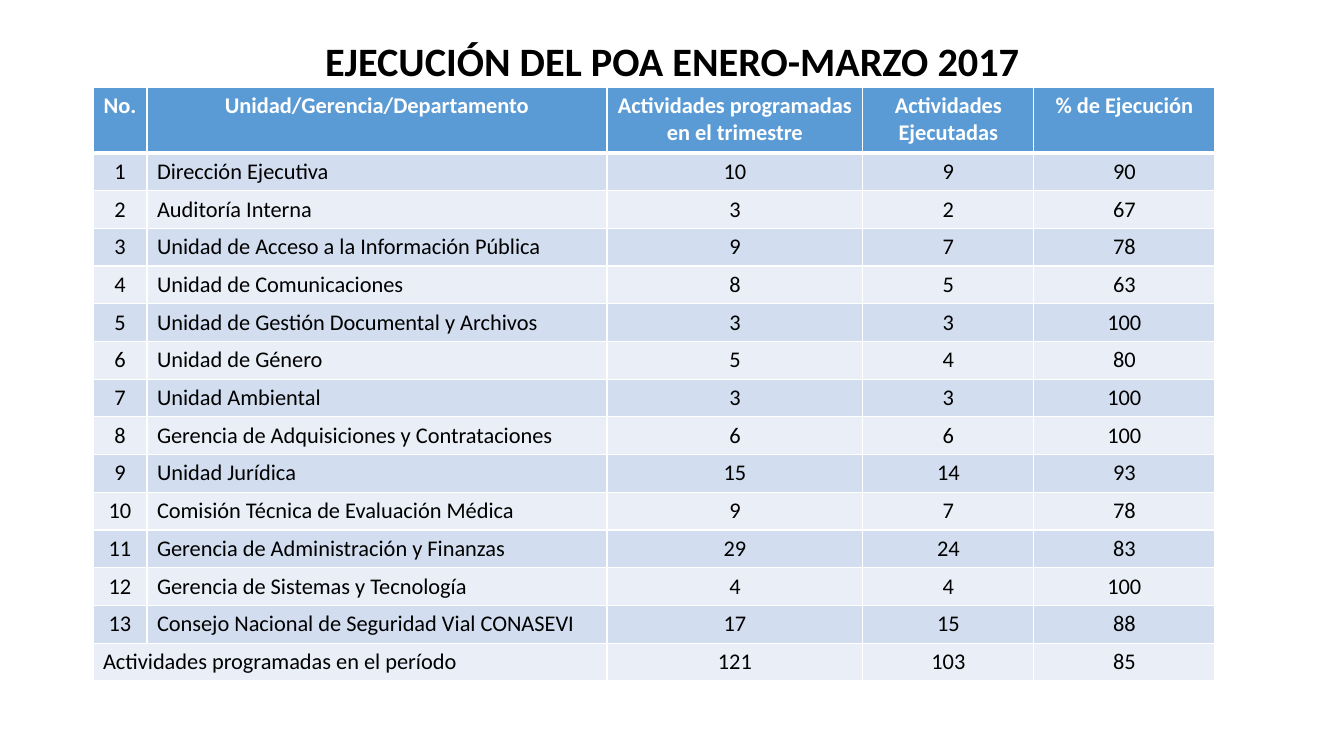
from pptx import Presentation
from pptx.dml.color import RGBColor
from pptx.enum.text import MSO_ANCHOR, MSO_AUTO_SIZE, PP_ALIGN
from pptx.oxml import parse_xml
from pptx.oxml.ns import nsdecls
from pptx.util import Emu, Pt

# Content
TITLE = "EJECUCIÓN DEL POA ENERO-MARZO 2017"
HEADER = ("No.", "Unidad/Gerencia/Departamento", "Actividades programadas en el trimestre",
          "Actividades Ejecutadas", "% de Ejecución")
UNITS = [
    ("Dirección Ejecutiva", 10, 9, 90),
    ("Auditoría Interna", 3, 2, 67),
    ("Unidad de Acceso a la Información Pública", 9, 7, 78),
    ("Unidad de Comunicaciones", 8, 5, 63),
    ("Unidad de Gestión Documental y Archivos", 3, 3, 100),
    ("Unidad de Género", 5, 4, 80),
    ("Unidad Ambiental", 3, 3, 100),
    ("Gerencia de Adquisiciones y Contrataciones", 6, 6, 100),
    ("Unidad Jurídica", 15, 14, 93),
    ("Comisión Técnica de Evaluación Médica", 9, 7, 78),
    ("Gerencia de Administración y Finanzas", 29, 24, 83),
    ("Gerencia de Sistemas y Tecnología", 4, 4, 100),
    ("Consejo Nacional de Seguridad Vial CONASEVI", 17, 15, 88),
]
TOTAL = ("Actividades programadas en el período", "", 121, 103, 85)

# Look
FONT = "Calibri"
BLACK = RGBColor(0x00, 0x00, 0x00)
WHITE = RGBColor(0xFF, 0xFF, 0xFF)
BLUE = RGBColor(0x5B, 0x9B, 0xD5)
BANDS = (RGBColor(0xD2, 0xDE, 0xEF), RGBColor(0xEA, 0xEF, 0xF7))

# Layout in px
SLIDE_W, SLIDE_H = 1344, 756
LEFT, TITLE_TOP, TITLE_W, TITLE_H = 93, 40, 1159, 46
TABLE_TOP, HEADER_H, BODY_H = 87, 66, 528
COL_W = (54, 460, 256, 171, 181)


def px(n):
    return Emu(round(n * 914400 / 100.8))


def set_borders(cell, top, bottom):
    """Draw white borders; the side lines are 1 pt wide."""
    tcPr = cell._tc.get_or_add_tcPr()
    for i, (side, width) in enumerate((("L", 1), ("R", 1), ("T", top), ("B", bottom))):
        tcPr.insert(i, parse_xml(
            f'<a:ln{side} {nsdecls("a")} w="{Pt(width)}"><a:solidFill>'
            f'<a:srgbClr val="{WHITE}"/></a:solidFill></a:ln{side}>'))


def style(p, size, color, bold, align):
    p.alignment = align
    p.font.name, p.font.size, p.font.bold = FONT, Pt(size), bold
    p.font.color.rgb = color


prs = Presentation()
prs.slide_width, prs.slide_height = px(SLIDE_W), px(SLIDE_H)
s = prs.slides.add_slide(prs.slide_layouts[5])

# Title
title = s.shapes.title
title.left, title.top, title.width, title.height = map(px, (LEFT, TITLE_TOP, TITLE_W, TITLE_H))
tf = title.text_frame
tf.text = TITLE
tf.word_wrap, tf.auto_size = True, MSO_AUTO_SIZE.NONE
tf.vertical_anchor = MSO_ANCHOR.MIDDLE
tf.paragraphs[0].line_spacing = 0.9
style(tf.paragraphs[0], 28.8, BLACK, True, PP_ALIGN.CENTER)

# Table
rows = [HEADER, *((n, *unit) for n, unit in enumerate(UNITS, 1)), TOTAL]
table = s.shapes.add_table(len(rows), len(COL_W), px(LEFT), px(TABLE_TOP),
                           px(sum(COL_W)), px(HEADER_H + BODY_H)).table
for col, width in zip(table.columns, COL_W):
    col.width = px(width)

last = len(rows) - 1
for r, values in enumerate(rows):
    head = r == 0
    table.rows[r].height = px(HEADER_H if head else BODY_H / last)
    for c, value in enumerate(values):
        cell = table.cell(r, c)
        cell.text = str(value)
        cell.fill.solid()
        cell.fill.fore_color.rgb = BLUE if head else BANDS[(r - 1) % 2]
        set_borders(cell, 3 if r == 1 else 1, 3 if head else 1)
        is_name = not head and (c == 1 or (r == last and c == 0))
        style(cell.text_frame.paragraphs[0], 16, WHITE if head else BLACK, head,
              PP_ALIGN.LEFT if is_name else PP_ALIGN.CENTER)
table.cell(last, 0).merge(table.cell(last, 1))

prs.save("out.pptx")
